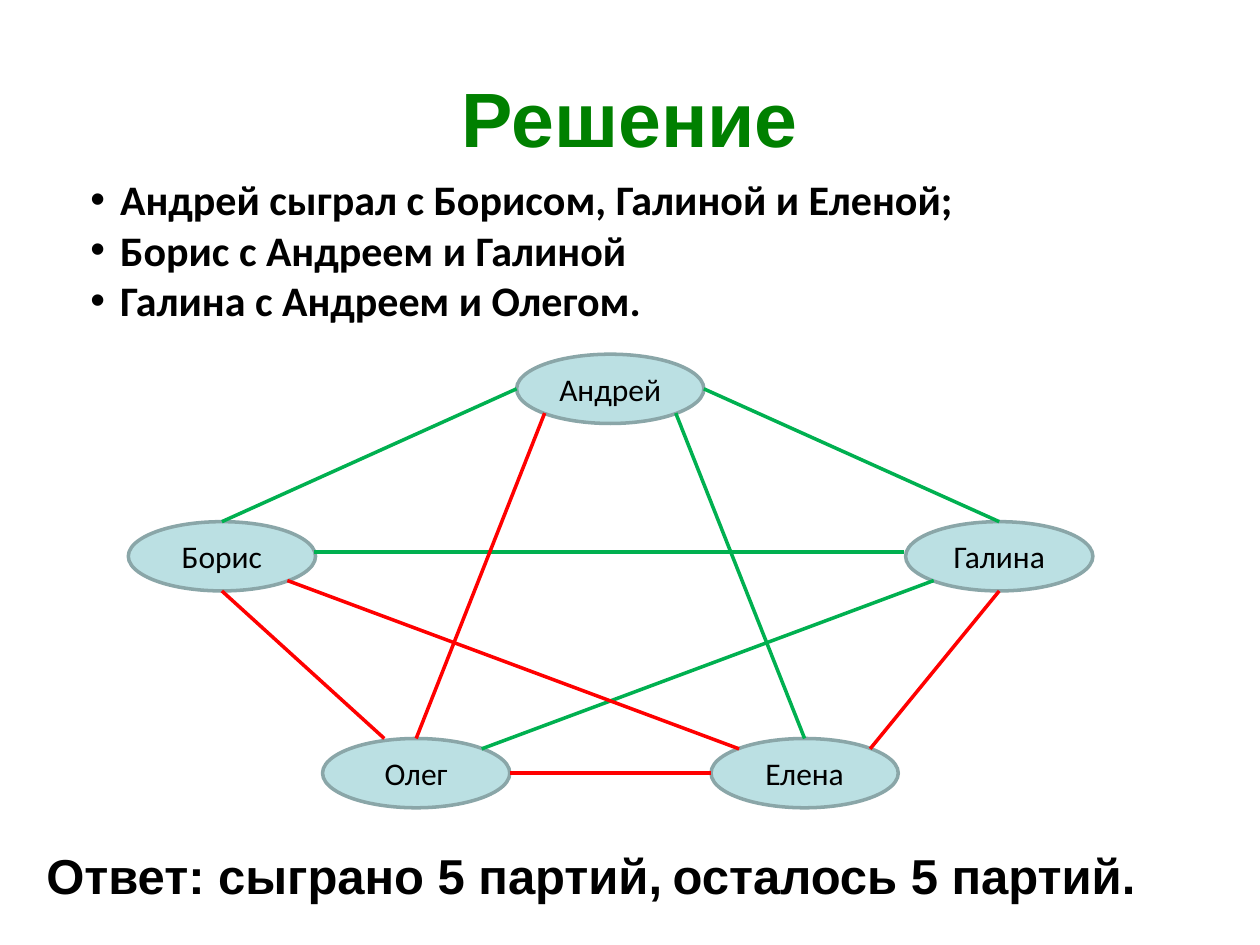
from lxml import etree
from pptx import Presentation
from pptx.dml.color import RGBColor
from pptx.enum.shapes import MSO_CONNECTOR, MSO_SHAPE
from pptx.enum.text import MSO_ANCHOR, PP_ALIGN
from pptx.oxml.ns import qn
from pptx.util import Pt

OVAL = MSO_SHAPE.OVAL
STRAIGHT = MSO_CONNECTOR.STRAIGHT
MIDDLE = MSO_ANCHOR.MIDDLE
CENTER = PP_ALIGN.CENTER
LEFT = PP_ALIGN.LEFT

COLORS = {
    "title": "008000",
    "text": "000000",
    "player": "BBE0E3",
    "outline": "8AA6A8",
    "played": "00B050",
    "remaining": "FF0000",
}


def add_run(paragraph, text, font, size, bold=True, color="text"):
    run = paragraph.add_run()
    run.text = text
    run.font.name = font
    run.font.size = Pt(size)
    run.font.bold = bold
    run.font.color.rgb = RGBColor.from_string(COLORS[color])


def add_text(left, top, width, height, lines, font, size, color="text", align=LEFT):
    box = slide.shapes.add_textbox(Pt(left), Pt(top), Pt(width), Pt(height))
    frame = box.text_frame
    frame.word_wrap = True
    for i, line in enumerate(lines):
        paragraph = frame.add_paragraph() if i else frame.paragraphs[0]
        paragraph.alignment = align
        add_run(paragraph, line, font, size, color=color)
    return frame


prs = Presentation()
prs.slide_width, prs.slide_height = Pt(720), Pt(540)
slide = prs.slides.add_slide(prs.slide_layouts[6])

title = add_text(36, 21.6, 648, 90, ["Решение"], "Arial", 44, "title", CENTER)
title.vertical_anchor = MIDDLE

games = add_text(44.6, 95.8, 579.6, 94.3, [
    "Андрей сыграл с Борисом, Галиной и Еленой;",
    "Борис с Андреем и Галиной",
    "Галина с Андреем и Олегом.",
], "Calibri", 24)
for paragraph in games.paragraphs:
    properties = paragraph._p.get_or_add_pPr()
    properties.set("marL", str(Pt(17)))
    properties.set("indent", str(-Pt(17)))
    etree.SubElement(properties, qn("a:buFont")).set("typeface", "Arial")
    etree.SubElement(properties, qn("a:buChar")).set("char", "•")

PLAYER_W, PLAYER_H = 107, 39.6
players = {
    "Андрей": (295.2, 202.4),
    "Борис": (73.3, 298.1),
    "Галина": (517.5, 298.1),
    "Елена": (406.3, 422),
    "Олег": (184.3, 422),
}
for name, (left, top) in players.items():
    player = slide.shapes.add_shape(OVAL, Pt(left), Pt(top), Pt(PLAYER_W), Pt(PLAYER_H))
    player.shadow.inherit = False
    player.fill.solid()
    player.fill.fore_color.rgb = RGBColor.from_string(COLORS["player"])
    player.line.color.rgb = RGBColor.from_string(COLORS["outline"])
    player.line.width = Pt(2)
    player.text_frame.vertical_anchor = MIDDLE
    label = player.text_frame.paragraphs[0]
    label.alignment = CENTER
    add_run(label, name, "Calibri", 18, bold=False)

NEAR, FAR = 0.15, 0.85
matches = [
    ("played", "Андрей", (0, 0.5), "Борис", (0.5, 0)),
    ("played", "Андрей", (1, 0.5), "Галина", (0.5, 0)),
    ("played", "Андрей", (FAR, FAR), "Елена", (0.5, 0)),
    ("played", "Борис", (0.99, 0.44), "Галина", (-0.01, 0.44)),
    ("played", "Галина", (NEAR, FAR), "Олег", (FAR, NEAR)),
    ("remaining", "Борис", (0.5, 1), "Олег", (0.33, 0)),
    ("remaining", "Борис", (FAR, FAR), "Елена", (NEAR, NEAR)),
    ("remaining", "Андрей", (NEAR, FAR), "Олег", (0.5, 0)),
    ("remaining", "Галина", (0.5, 1), "Елена", (FAR, NEAR)),
    ("remaining", "Олег", (1, 0.5), "Елена", (0, 0.5)),
]
for status, first, start, second, end in matches:
    ends = []
    for name, (across, down) in ((first, start), (second, end)):
        left, top = players[name]
        ends += [Pt(left + across * PLAYER_W), Pt(top + down * PLAYER_H)]
    match = slide.shapes.add_connector(STRAIGHT, *ends)
    match.line.color.rgb = RGBColor.from_string(COLORS[status])
    match.line.width = Pt(2)
    etree.SubElement(match._element.spPr, qn("a:effectLst"))

add_text(19.4, 479.5, 646.6, 41, ["Ответ: сыграно 5 партий,"], "Arial", 28)
add_text(377.3, 479.5, 286.6, 41, ["осталось 5 партий."], "Arial", 28)

prs.save("out.pptx")
